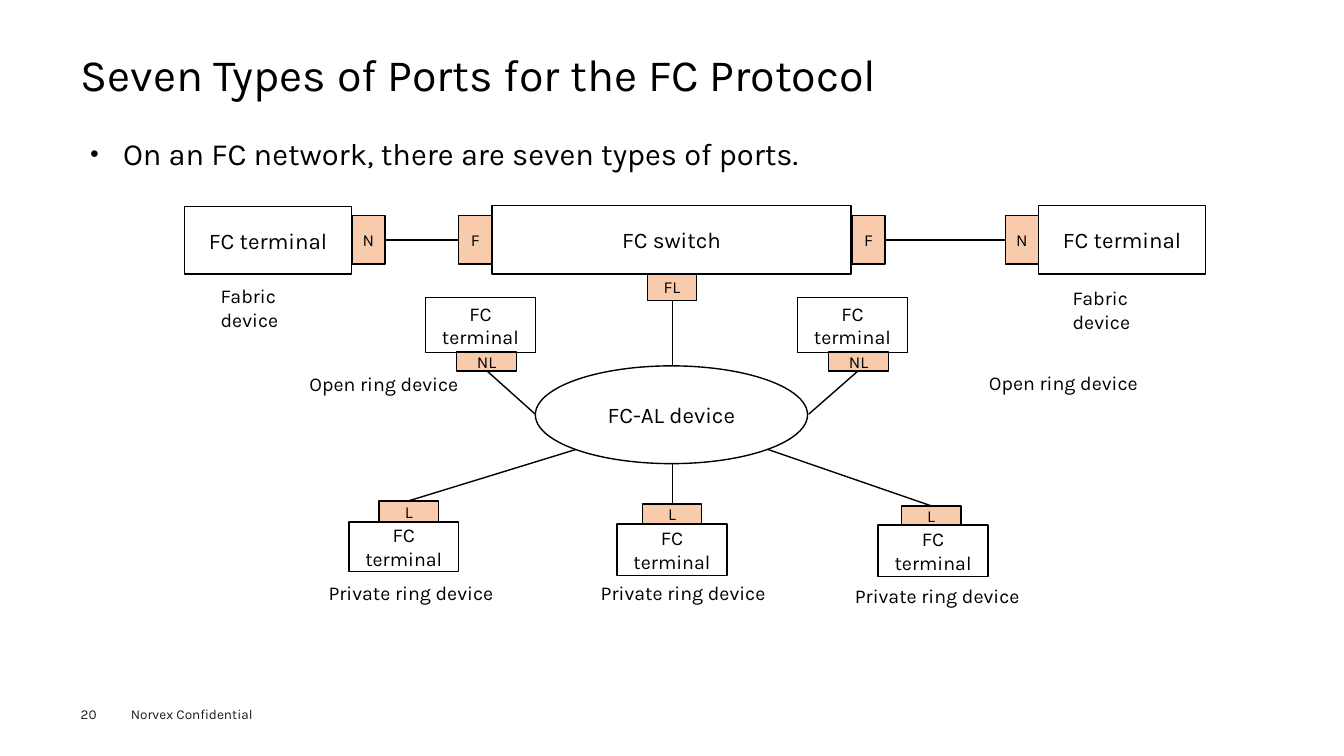
from typing import NamedTuple

from lxml.etree import SubElement
from pptx import Presentation
from pptx.dml.color import RGBColor
from pptx.enum.shapes import MSO_CONNECTOR, MSO_SHAPE
from pptx.enum.text import MSO_ANCHOR, MSO_AUTO_SIZE, PP_ALIGN
from pptx.oxml.ns import qn
from pptx.util import Inches, Pt

FONT = "Karla"
BLACK, WHITE, PEACH, GREY = "000000", "FFFFFF", "F8CBAD", "1D1D1B"


class Node(NamedTuple):
    text: str
    x: float
    y: float
    w: float
    h: float
    size: float = 16
    fill: str = ""
    kind: MSO_SHAPE = MSO_SHAPE.RECTANGLE


class Link(NamedTuple):
    x1: float
    y1: float
    x2: float
    y2: float


class Label(NamedTuple):
    text: str
    x: float
    y: float
    w: float
    size: float = 14
    color: str = BLACK
    inset: float = 0.1


def terminal(x: float, y: float, h: float) -> Node:
    return Node("FC terminal", x, y, 1.09, h, 14)


def port(text: str, x: float, y: float, w: float, h: float) -> Node:
    return Node(text, x, y, w, h, 12, PEACH)


NODES = [
    Node("FC switch", 4.88, 2.04, 3.56, 0.68),
    Node("FC terminal", 10.3, 2.04, 1.66, 0.68),
    Node("FC terminal", 1.83, 2.05, 1.66, 0.67),
    *[port(t, x, 2.14, 0.33, 0.48)
      for t, x in [("N", 3.49), ("F", 4.55), ("F", 8.45), ("N", 9.97)]],
    port("FL", 6.42, 2.72, 0.49, 0.26),
    Node("FC-AL device", 5.31, 3.63, 2.7, 0.97, 16, WHITE, MSO_SHAPE.OVAL),
]
for x in (4.22, 7.91):
    NODES += [terminal(x, 2.95, 0.55), port("NL", x + 0.31, 3.49, 0.59, 0.19)]
for x, y, h, port_x, port_y in [(3.46, 5.18, 0.49, 3.76, 4.97),
                                (6.12, 5.2, 0.51, 6.37, 5),
                                (8.71, 5.21, 0.51, 8.94, 5.02)]:
    NODES += [terminal(x, y, h), port("L", port_x, port_y, 0.59, y - port_y)]

LINKS = [
    Link(3.82, 2.38, 4.55, 2.38),
    Link(8.78, 2.38, 9.97, 2.38),
    Link(6.67, 2.98, 6.67, 3.63),
    Link(4.83, 3.68, 5.31, 4.11),
    Link(5.71, 4.46, 4.05, 4.97),
    Link(6.67, 4.6, 6.67, 5),
    Link(9.24, 5.02, 7.62, 4.46),
    Link(8.51, 3.68, 8.02, 4.11),
]

LABELS = [
    Label("Fabric device", 2.09, 2.77, 1.2),
    Label("Fabric device", 10.54, 2.79, 1.2),
    Label("Open ring device", 2.97, 3.64, 1.71),
    Label("Open ring device", 9.71, 3.63, 1.71),
    Label("Private ring device", 3.16, 5.71, 1.85),
    Label("Private ring device", 5.86, 5.71, 1.85),
    Label("Private ring device", 8.38, 5.74, 1.85),
    Label("Norvex Confidential", 1.2, 6.95, 1.6, 9.7, GREY),
    Label("20", 0.8, 7, 0.55, 9.7, GREY, 0),
]


def rgb(color: str) -> RGBColor:
    return RGBColor.from_string(color)


def write(sp, text: str, size: float, color: str = BLACK, align=PP_ALIGN.LEFT,
          anchor=MSO_ANCHOR.TOP, inset_x: float = 0, inset_y: float = 0):
    """Set the single paragraph of a shape and return it."""
    tf = sp.text_frame
    tf.text = text
    tf.word_wrap = True
    tf.auto_size = MSO_AUTO_SIZE.NONE
    tf.vertical_anchor = anchor
    tf.margin_left = tf.margin_right = Inches(inset_x)
    tf.margin_top = tf.margin_bottom = Inches(inset_y)
    p = tf.paragraphs[0]
    p.alignment = align
    p.space_before = Pt(0)
    font = p.runs[0].font
    font.name, font.size, font.color.rgb = FONT, Pt(size), rgb(color)
    return p


def place(sp, x: float, y: float, w: float, h: float) -> None:
    sp.left, sp.top, sp.width, sp.height = map(Inches, (x, y, w, h))


def add_node(s, node: Node) -> None:
    sp = s.shapes.add_shape(node.kind, *map(Inches, node[1:5]))
    sp.shadow.inherit = False
    if node.fill:
        sp.fill.solid()
        sp.fill.fore_color.rgb = rgb(node.fill)
    else:
        sp.fill.background()
    sp.line.color.rgb = rgb(BLACK)
    sp.line.width = Pt(1)
    inset = 0 if node.size == 12 else 0.1
    write(sp, node.text, node.size, align=PP_ALIGN.CENTER,
          anchor=MSO_ANCHOR.MIDDLE, inset_x=inset, inset_y=inset / 2)


def add_link(s, link: Link) -> None:
    line = s.shapes.add_connector(MSO_CONNECTOR.STRAIGHT, *map(Inches, link))
    line.line.color.rgb = rgb(BLACK)
    line.line.width = Pt(1)
    SubElement(line._element.spPr, qn("a:effectLst"))


def add_label(s, label: Label) -> None:
    height = 0.34 if label.size == 14 else 0.27
    sp = s.shapes.add_textbox(*map(Inches, (label.x, label.y, label.w, height)))
    write(sp, label.text, label.size, label.color,
          inset_x=label.inset, inset_y=label.inset / 2)


def add_heading(s) -> None:
    """Fill the title and the bulleted body placeholder."""
    title, body = s.shapes.title, s.placeholders[1]
    place(title, 0.8, 0.49, 11.73, 0.54)
    p = write(title, "Seven Types of Ports for the FC Protocol", 32,
              anchor=MSO_ANCHOR.MIDDLE)
    p.line_spacing = 0.9

    place(body, 0.8, 1.15, 11.73, 5.33)
    p = write(body, "On an FC network, there are seven types of ports.", 22,
              align=PP_ALIGN.JUSTIFY, inset_x=0.09, inset_y=0.04)
    p.line_spacing = 1.4
    pPr = p._p.get_or_add_pPr()
    pPr.set("marL", str(Inches(0.33)))
    pPr.set("indent", str(Inches(-0.33)))
    SubElement(pPr, qn("a:buSzPct"), val="50000")
    SubElement(pPr, qn("a:buChar"), char="●")


def main() -> None:
    prs = Presentation()
    prs.slide_width, prs.slide_height = Inches(13.33), Inches(7.5)
    s = prs.slides.add_slide(prs.slide_layouts[1])
    add_heading(s)
    for node in NODES:
        add_node(s, node)
    for link in LINKS:
        add_link(s, link)
    for label in LABELS:
        add_label(s, label)
    prs.save("out.pptx")


if __name__ == "__main__":
    main()
